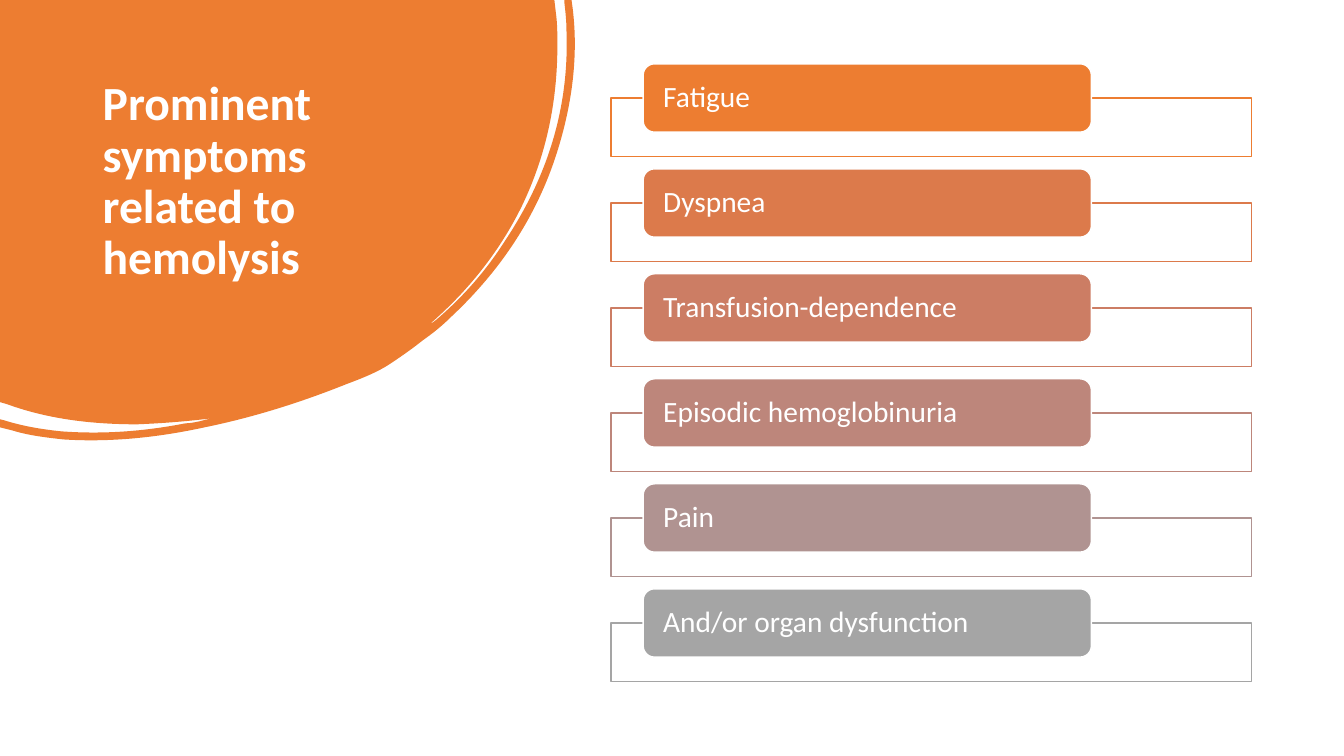
from lxml.etree import SubElement
from pptx import Presentation
from pptx.dml.color import RGBColor
from pptx.enum.shapes import MSO_SHAPE
from pptx.enum.text import MSO_ANCHOR, MSO_AUTO_SIZE, PP_ALIGN
from pptx.oxml.ns import qn
from pptx.util import Pt

HUES = {
    "white": "FFFFFF", "orange": "ED7D31", "rust": "DC7A4B",
    "clay": "CC7D64", "rose": "BD867B", "mauve": "B09391", "gray": "A5A5A5",
}
SIGNS = [
    ("Fatigue", "orange"),
    ("Dyspnea", "rust"),
    ("Transfusion-dependence", "clay"),
    ("Episodic hemoglobinuria", "rose"),
    ("Pain", "mauve"),
    ("And/or organ dysfunction", "gray"),
]
PITCH = 75  # from one row to the next

# Blob outline in hundredths of an inch: 2 numbers for a line, 6 for a curve
UNIT = 0.72
WIDE, HIGH = 571, 437
BLOB = [
    (0, 0), (550, 0), (552, 17),
    (553, 26, 553, 36, 553, 45), (553, 101, 542, 154, 518, 204),
    (496, 249, 465, 288, 427, 321), (429, 321, 430, 319, 432, 318),
    (459, 295, 482, 269, 501, 239), (543, 176, 565, 107, 562, 30),
    (562, 21, 561, 12, 560, 3), (560, 0), (567, 0), (568, 7),
    (574, 54, 568, 102, 553, 150), (533, 214, 497, 268, 448, 314),
    (439, 323, 429, 331, 419, 338), (409, 346, 399, 353, 387, 361),
    (375, 369, 360, 375, 344, 381), (299, 399, 252, 414, 203, 424),
    (157, 434, 110, 439, 63, 436), (45, 434, 28, 432, 12, 427),
    (0, 424), (0, 416), (4, 417),
    (23, 423, 42, 426, 61, 428), (103, 431, 143, 428, 184, 420),
    (189, 420, 193, 419, 198, 418), (202, 417, 206, 416, 210, 415),
    (186, 418, 161, 420, 136, 421), (92, 421, 48, 416, 7, 401),
    (0, 399),
]


def color(name):
    return RGBColor.from_string(HUES[name])


def paint(shape, fill, line=None):
    shape.shadow.inherit = False
    shape.fill.solid()
    shape.fill.fore_color.rgb = color(fill)
    if line:
        shape.line.color.rgb = color(line)
        shape.line.width = Pt(1)
    else:
        shape.line.fill.background()


def write(frame, text, size, bold=False, anchor=MSO_ANCHOR.MIDDLE):
    frame.word_wrap = True
    frame.vertical_anchor = anchor
    para = frame.paragraphs[0]
    para.alignment = PP_ALIGN.LEFT
    para.line_spacing = 0.9
    run = para.add_run()
    run.text = text
    run.font.name = "Calibri"
    run.font.size = Pt(size)
    run.font.bold = bold
    run.font.color.rgb = color("white")


def add_blob(slide):
    pen = slide.shapes.build_freeform(*BLOB[0], scale=Pt(UNIT))
    pen.add_line_segments([part[-2:] for part in BLOB[1:]], close=True)
    blob = pen.convert_to_shape()
    paint(blob, "orange")

    # Turn lines into curves where the outline has control points
    trail = next(blob.element.iter(qn("a:path")))
    for part, line in zip(BLOB[1:], trail.findall(qn("a:lnTo"))):
        if len(part) == 6:
            line.clear()
            line.tag = qn("a:cubicBezTo")
            for x, y in zip(part[::2], part[1::2]):
                SubElement(line, qn("a:pt"), x=str(x), y=str(y))

    # Let the frame hold the bulge of the curves
    trail.set("w", str(WIDE))
    trail.set("h", str(HIGH))
    blob.width, blob.height = Pt(WIDE * UNIT), Pt(HIGH * UNIT)


def set_title(slide, text):
    title = slide.shapes.title
    title.left, title.top = Pt(66.2), Pt(53.3)
    title.width, title.height = Pt(253.4), Pt(159.8)
    title.text_frame.auto_size = MSO_AUTO_SIZE.NONE
    write(title.text_frame, text, 34, True, MSO_ANCHOR.TOP)
    # Bring the title in front of the blob
    tree = title.element.getparent()
    tree.append(title.element)


def add_frame(slide, top, hue):
    box = slide.shapes.add_shape(
        MSO_SHAPE.RECTANGLE, Pt(436.5), Pt(top), Pt(457.5), Pt(41.7))
    paint(box, "white", hue)
    tint = box.element.spPr.find(qn("a:solidFill"))[0]
    SubElement(tint, qn("a:alpha"), val="90000")


def add_pill(slide, top, text, hue):
    pill = slide.shapes.add_shape(
        MSO_SHAPE.ROUNDED_RECTANGLE, Pt(459.4), Pt(top), Pt(320.2), Pt(48.8))
    paint(pill, hue, "white")
    frame = pill.text_frame
    frame.margin_left = frame.margin_right = Pt(12)
    frame.margin_top = frame.margin_bottom = Pt(0)
    write(frame, text, 21)


def main():
    deck = Presentation()
    deck.slide_width, deck.slide_height = Pt(960), Pt(540)
    slide = deck.slides.add_slide(deck.slide_layouts[5])

    # Heading on its blob
    add_blob(slide)
    set_title(slide, "Prominent symptoms related to hemolysis")

    # List of symptoms
    for i, (text, hue) in enumerate(SIGNS):
        add_frame(slide, 70 + i * PITCH, hue)
        add_pill(slide, 45.6 + i * PITCH, text, hue)

    deck.save("out.pptx")


if __name__ == "__main__":
    main()
